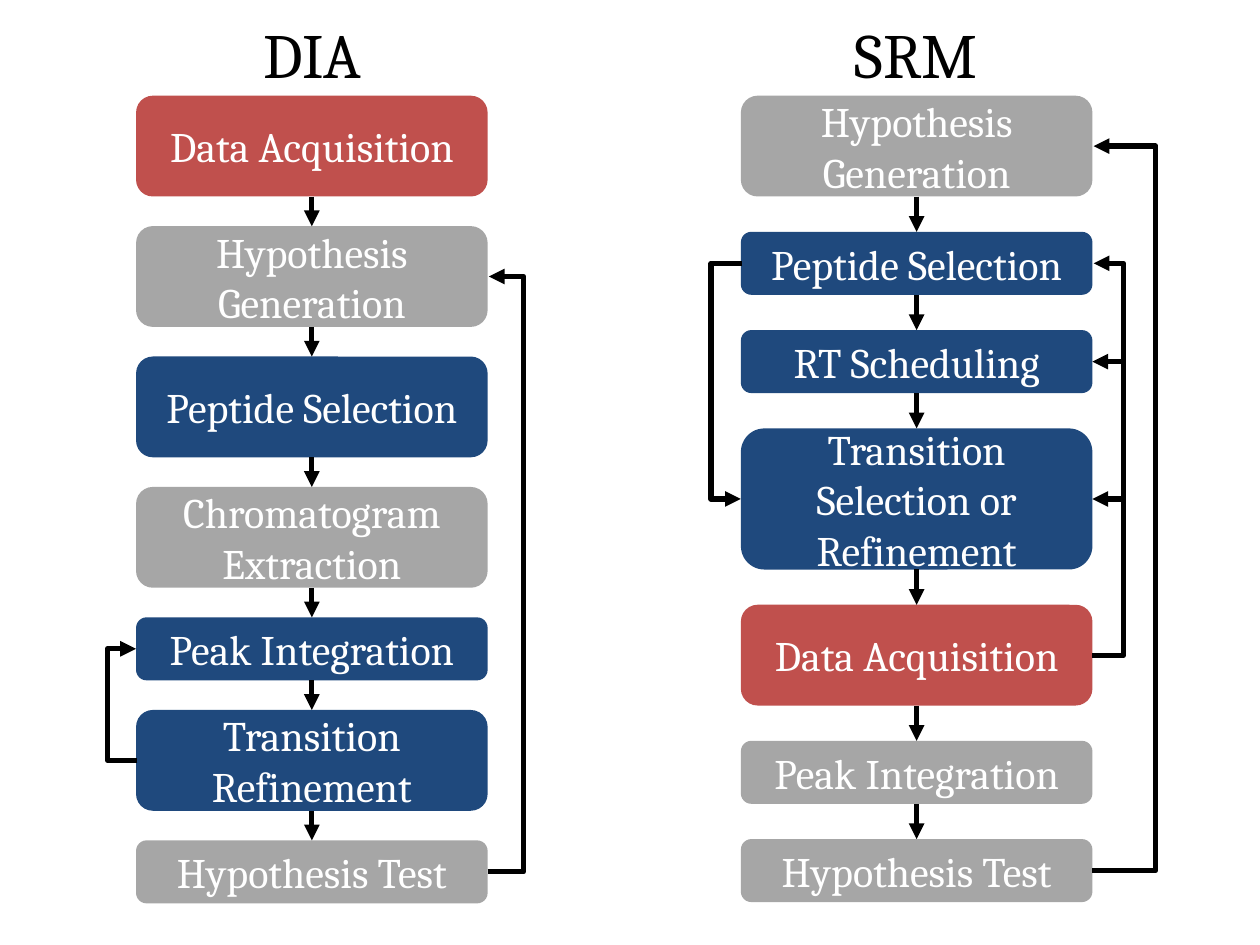
from lxml.etree import SubElement
from pptx import Presentation
from pptx.dml.color import RGBColor
from pptx.enum.shapes import MSO_CONNECTOR as Connector, MSO_SHAPE as Preset
from pptx.enum.text import MSO_ANCHOR as Anchor, MSO_AUTO_SIZE as AutoSize, PP_ALIGN as Align
from pptx.oxml.ns import qn
from pptx.util import Inches, Pt

RED, BLUE, GRAY = "C0504D", "1F497D", "A6A6A6"
WHITE, BLACK = "FFFFFF", "000000"
TOP, BOX_WIDTH, STEP = 0.76, 2.79, 0.01

WORKFLOWS = [
    {
        "title": ("DIA", 1.9, 1.16),
        "left": 1.08,
        "bottom": 7.17,
        "stages": [
            ("Data Acquisition", 0.8, RED),
            ("Hypothesis Generation", 0.8, GRAY),
            ("Peptide Selection", 0.8, BLUE),
            ("Chromatogram Extraction", 0.8, GRAY),
            ("Peak Integration", 0.5, BLUE),
            ("Transition Refinement", 0.8, BLUE),
            ("Hypothesis Test", 0.5, GRAY),
        ],
        "right_loops": [(6, 1, 0.29)],
        "left_loops": [(5, 4, 0.23)],
        "branches": [],
    },
    {
        "title": ("SRM", 6.63, 1.28),
        "left": 5.88,
        "bottom": 7.16,
        "stages": [
            ("Hypothesis Generation", 0.8, GRAY),
            ("Peptide Selection", 0.5, BLUE),
            ("RT Scheduling", 0.5, BLUE),
            ("Transition Selection or Refinement", 1.12, BLUE),
            ("Data Acquisition", 0.8, RED),
            ("Peak Integration", 0.5, GRAY),
            ("Hypothesis Test", 0.5, GRAY),
        ],
        "right_loops": [(4, 1, 0.25), (6, 0, 0.51)],
        "left_loops": [(1, 3, 0.24)],
        "branches": [(2, 0.25), (3, 0.25)],
    },
]


def color(hex_value):
    """Turn a hex string into a colour."""
    return RGBColor.from_string(hex_value)


class FlowPainter:
    """Draw workflow elements on the current slide in one style."""

    def __init__(self, slide):
        self.slide = slide
        self.canvas = slide.shapes
        self.font_name = "Cambria"
        self.line_width = Pt(3)

    def start_group(self):
        """Send the next elements to a new group."""
        self.canvas = self.slide.shapes.add_group_shape().shapes

    def label(self, frame, text, size, hex_value, **frame_format):
        """Put one centred paragraph into a text frame."""
        for name, value in frame_format.items():
            setattr(frame, name, value)
        paragraph = frame.paragraphs[0]
        paragraph.alignment = Align.CENTER
        run = paragraph.add_run()
        run.text = text
        for name, value in {"name": self.font_name, "size": Pt(size)}.items():
            setattr(run.font, name, value)
        run.font.color.rgb = color(hex_value)

    def title(self, text, left, width):
        """Add a column title."""
        shape = self.slide.shapes.add_textbox(
            Inches(left), Inches(0.07), Inches(width), Inches(0.71))
        self.label(shape.text_frame, text, 36, BLACK,
                   word_wrap=False, auto_size=AutoSize.SHAPE_TO_FIT_TEXT)

    def box(self, text, left, top, height, hex_value):
        """Add a rounded stage box."""
        shape = self.canvas.add_shape(
            Preset.ROUNDED_RECTANGLE,
            Inches(left), Inches(top), Inches(BOX_WIDTH), Inches(height))
        shape.shadow.inherit = False
        shape.fill.solid()
        shape.fill.fore_color.rgb = color(hex_value)
        shape.line.fill.background()
        self.label(shape.text_frame, text, 24, WHITE,
                   word_wrap=True, vertical_anchor=Anchor.MIDDLE)
        return shape

    def arrow(self, kind, begin, end):
        """Add a connector with an arrowhead at its end."""
        points = [Inches(value) for value in (*begin, *end)]
        connector = self.canvas.add_connector(kind, *points)
        connector.line.width = self.line_width
        connector.line.color.rgb = color(BLACK)
        properties = connector._element.spPr
        SubElement(properties.find(qn("a:ln")), qn("a:tailEnd"), type="triangle")
        SubElement(properties, qn("a:effectLst"))
        return connector

    def link(self, upper, lower):
        """Join the bottom of one box to the top of the next."""
        connector = self.arrow(Connector.STRAIGHT, (0, 0), (0, 0))
        connector.begin_connect(upper, 2)
        connector.end_connect(lower, 0)

    def loop(self, begin, end, bend_x):
        """Add an elbow arrow that runs out to bend_x and back."""
        connector = self.arrow(Connector.ELBOW, begin, end)
        ratio = round((bend_x - begin[0]) / (end[0] - begin[0]) * 100000)
        geometry = connector._element.spPr.find(qn("a:prstGeom"))
        guides = geometry.find(qn("a:avLst"))
        if guides is None:
            guides = SubElement(geometry, qn("a:avLst"))
        SubElement(guides, qn("a:gd"), name="adj1", fmla=f"val {ratio}")

    def workflow(self, title, left, bottom, stages, right_loops, left_loops, branches):
        """Draw a column of evenly spaced stages with its arrows."""
        self.start_group()
        right = left + BOX_WIDTH
        gap = (bottom - TOP - sum(stage[1] for stage in stages)) / (len(stages) - 1)
        boxes, middles, top = [], [], TOP
        for text, height, hex_value in stages:
            boxes.append(self.box(text, left, top, height, hex_value))
            middles.append(top + height / 2)
            top += height + gap
        for upper, lower in zip(boxes, boxes[1:]):
            self.link(upper, lower)
        for source, target, reach in right_loops:
            self.loop((right, middles[source]), (right + STEP, middles[target]), right + reach)
        for source, target, reach in left_loops:
            self.loop((left + STEP, middles[source]), (left, middles[target]), left - reach)
        for target, reach in branches:
            self.arrow(Connector.STRAIGHT,
                       (right + reach, middles[target]), (right, middles[target]))
        self.title(*title)


def main():
    """Build the slide with both workflows."""
    presentation = Presentation()
    presentation.slide_width, presentation.slide_height = Inches(10), Inches(7.5)
    painter = FlowPainter(presentation.slides.add_slide(presentation.slide_layouts[6]))
    for workflow in WORKFLOWS:
        painter.workflow(**workflow)
    presentation.save("out.pptx")


if __name__ == "__main__":
    main()
